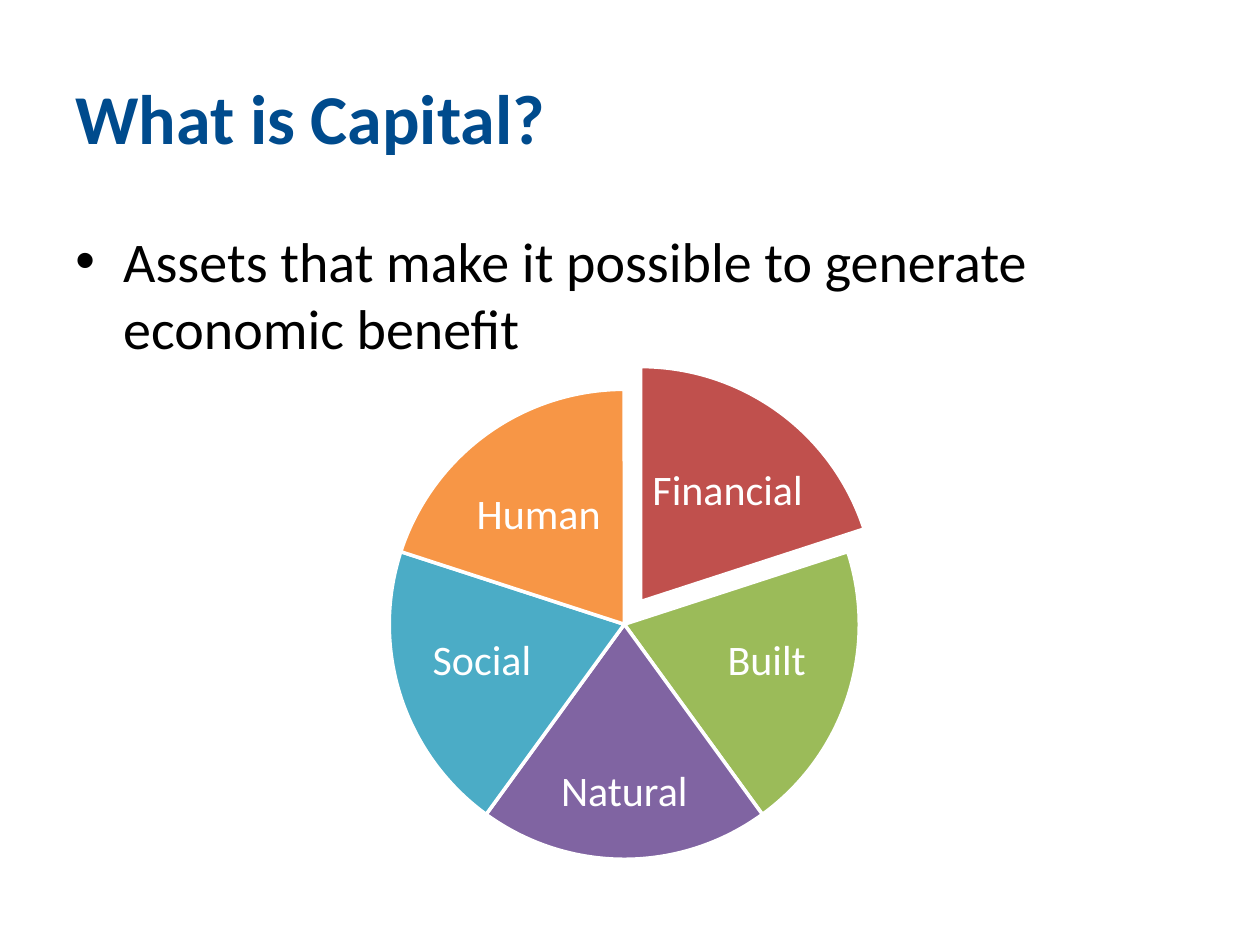
"""Build the "What is Capital?" slide with its five-part pie."""
from lxml import etree
from pptx import Presentation
from pptx.dml.color import RGBColor
from pptx.enum.shapes import MSO_SHAPE
from pptx.enum.text import MSO_ANCHOR, PP_ALIGN
from pptx.oxml.ns import qn
from pptx.util import Inches, Pt

PIE = MSO_SHAPE.PIE
MIDDLE, TOP = MSO_ANCHOR.MIDDLE, MSO_ANCHOR.TOP
CENTER, LEFT = PP_ALIGN.CENTER, PP_ALIGN.LEFT

NAVY = RGBColor(0x00, 0x4B, 0x8D)
BLACK = RGBColor(0x00, 0x00, 0x00)
WHITE = RGBColor(0xFF, 0xFF, 0xFF)
RED = RGBColor(0xC0, 0x50, 0x4D)
GREEN = RGBColor(0x9B, 0xBB, 0x59)
PURPLE = RGBColor(0x80, 0x64, 0xA2)
TEAL = RGBColor(0x4B, 0xAC, 0xC6)
ORANGE = RGBColor(0xF7, 0x96, 0x46)

FONT = "Calibri"
TITLE = "What is Capital?"
DEFINITION = "Assets that make it possible to generate economic benefit"
CAPITALS = [
    ("Financial", RED, (3.22, 2.91), (5.14, 3.47, 1.27, 0.87)),
    ("Built", GREEN, (3.09, 3.09), (5.53, 4.78, 1.11, 0.94)),
    ("Natural", PURPLE, (3.09, 3.09), (4.29, 5.89, 1.33, 0.8)),
    ("Social", TEAL, (3.09, 3.09), (3.27, 4.78, 1.11, 0.94)),
    ("Human", ORANGE, (3.09, 3.09), (3.64, 3.66, 1.27, 0.87)),
]
DIAMETER = 3.73
FULL_TURN = 216
START = 162
SWEEP = FULL_TURN / len(CAPITALS)


def add_text(shapes, text, box, size, color, anchor=MIDDLE, align=LEFT, bold=False, inset=None):
    frame = shapes.add_textbox(*map(Inches, box)).text_frame
    frame.word_wrap = True
    frame.vertical_anchor = anchor
    if inset is not None:
        frame.margin_left = frame.margin_right = Inches(inset)
        frame.margin_top = frame.margin_bottom = Inches(inset)
    paragraph = frame.paragraphs[0]
    paragraph.alignment = align
    run = paragraph.add_run()
    run.text = text
    run.font.name, run.font.size, run.font.bold = FONT, Pt(size), bold
    run.font.color.rgb = color
    return paragraph


def add_bullet(paragraph, indent):
    properties = paragraph._p.get_or_add_pPr()
    properties.set("marL", str(Inches(indent)))
    properties.set("indent", str(-Inches(indent)))
    etree.SubElement(properties, qn("a:buFont"), typeface="Arial")
    etree.SubElement(properties, qn("a:buChar"), char="•")


def add_slice(shapes, position, color, start):
    wedge = shapes.add_shape(PIE, *map(Inches, (*position, DIAMETER, DIAMETER)))
    wedge.adjustments[0] = round(start % FULL_TURN, 1)
    wedge.adjustments[1] = round((start + SWEEP) % FULL_TURN, 1)
    wedge.shadow.inherit = False
    wedge.fill.solid()
    wedge.fill.fore_color.rgb = color
    wedge.line.color.rgb = WHITE
    wedge.line.width = Pt(2)


def main():
    deck = Presentation()
    deck.slide_width, deck.slide_height = Inches(10), Inches(7.5)
    slide = deck.slides.add_slide(deck.slide_layouts[6])
    add_text(slide.shapes, TITLE, (0.5, 0.3, 9, 1.25), 40, NAVY, bold=True)
    definition = add_text(slide.shapes, DEFINITION, (0.5, 1.75, 9, 4.33), 32, BLACK, anchor=TOP)
    add_bullet(definition, 0.38)

    pie = slide.shapes.add_group_shape().shapes
    for index, (name, color, position, label_box) in enumerate(CAPITALS):
        add_slice(pie, position, color, START + index * SWEEP)
        label = add_text(pie, name, label_box, 24, WHITE, align=CENTER, inset=0.03)
        label.line_spacing = 0.9
    deck.save("out.pptx")


if __name__ == "__main__":
    main()
